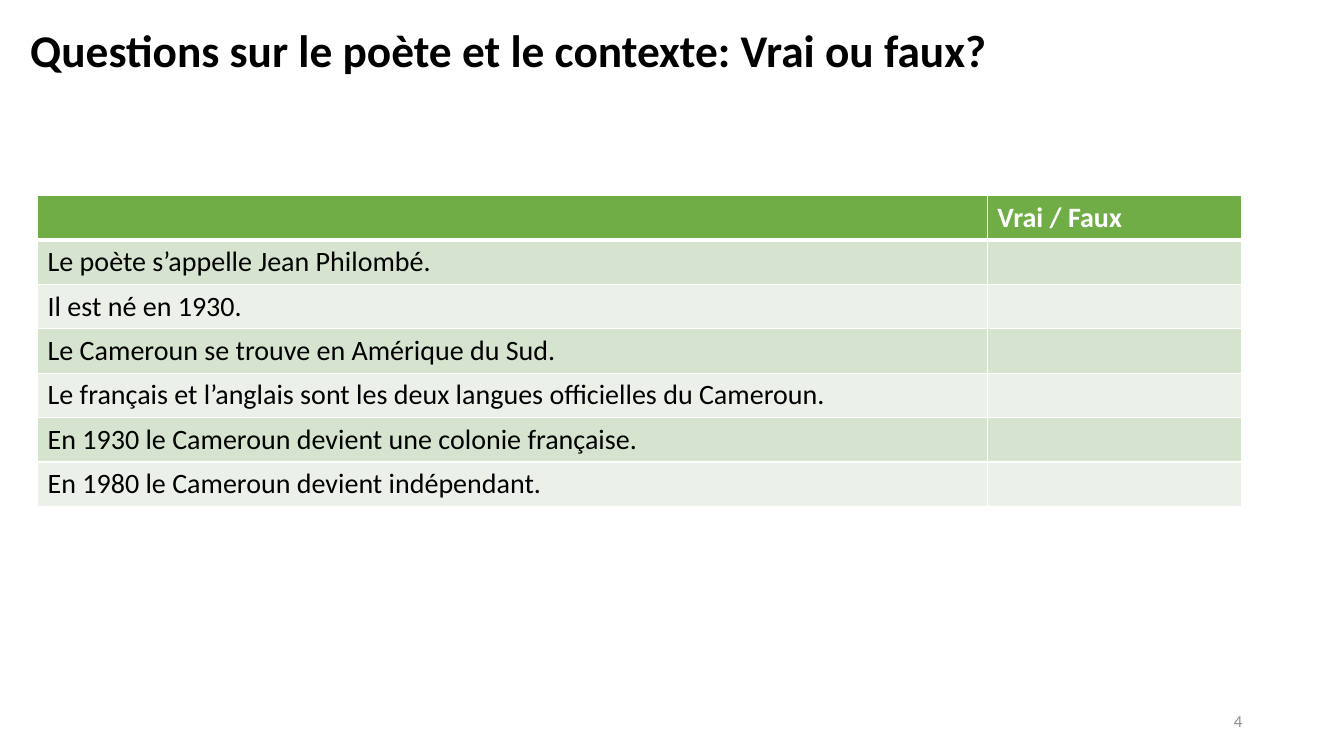
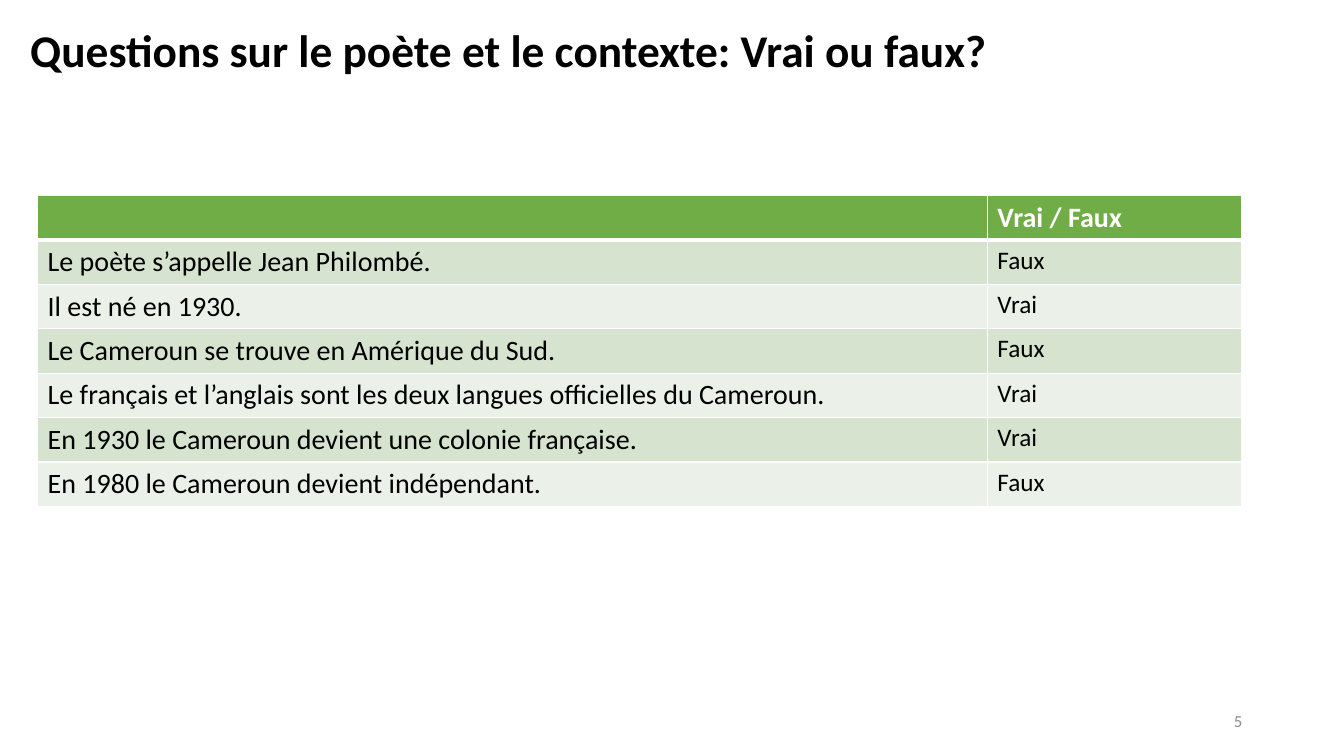
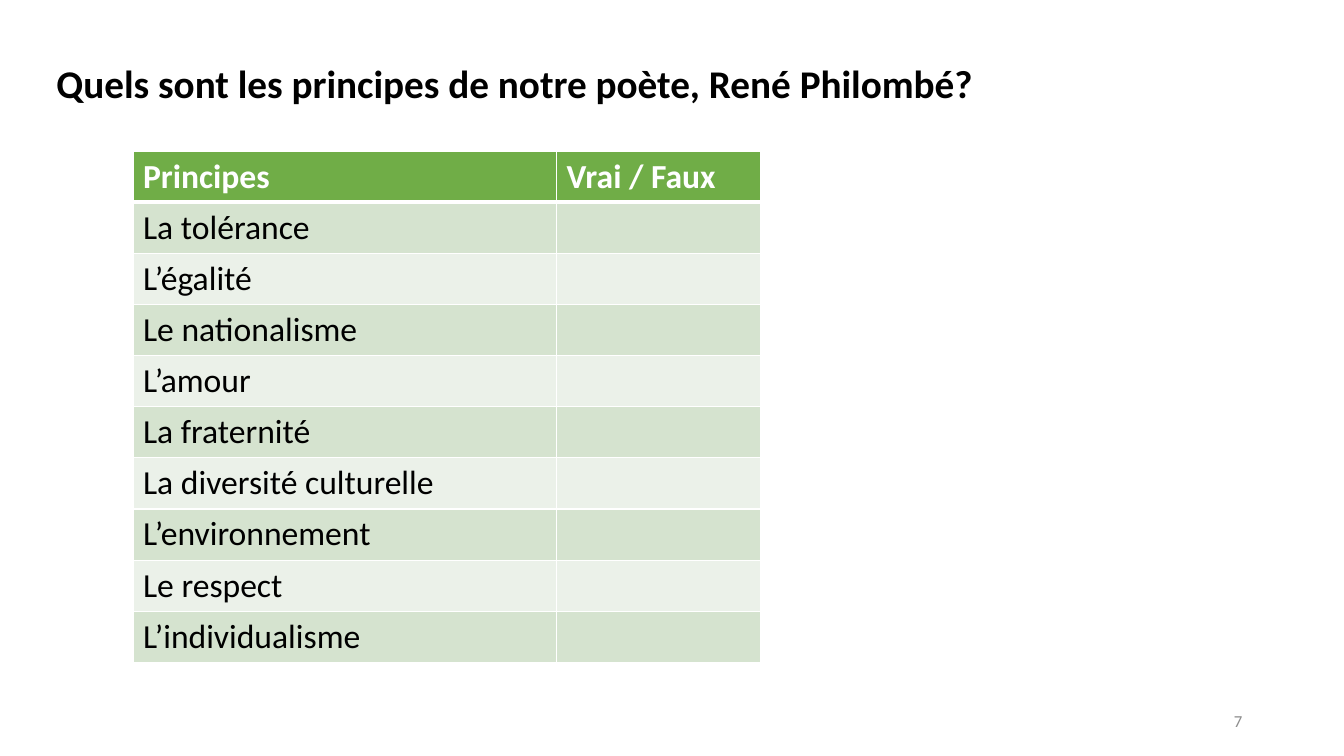
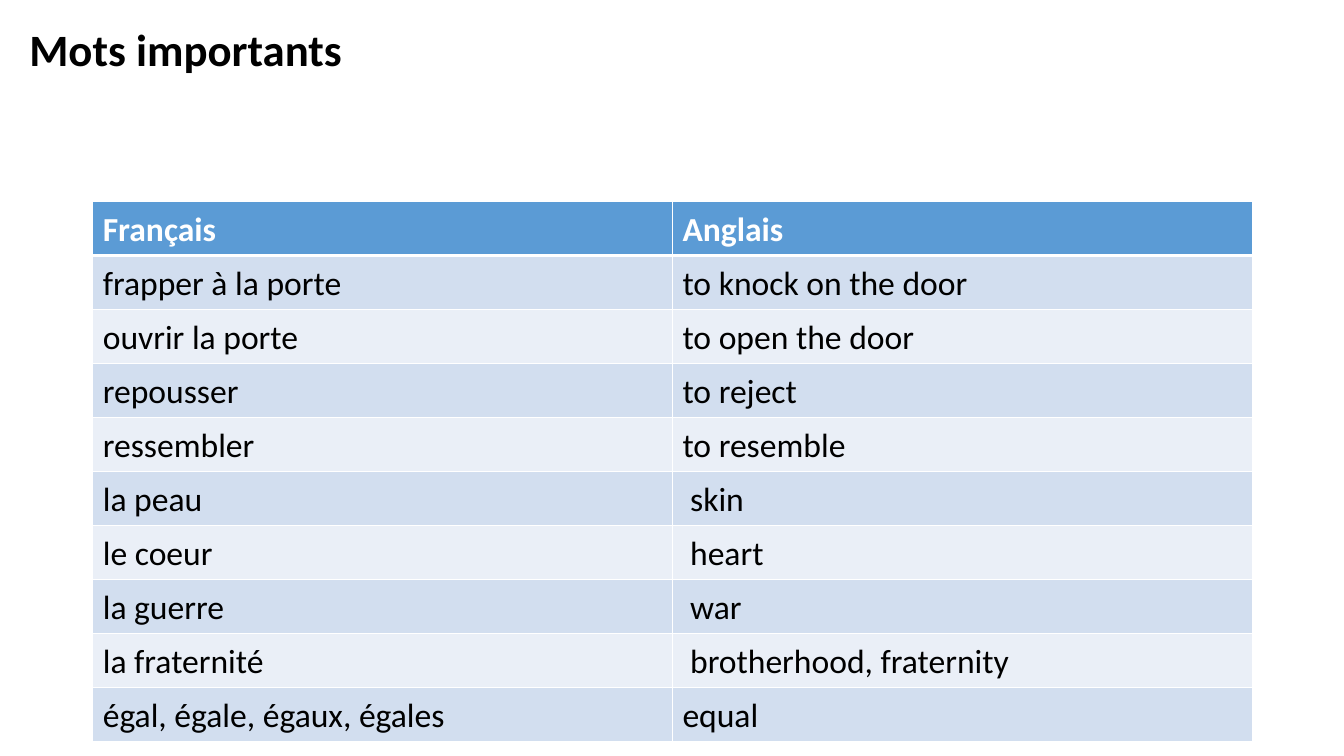
from pptx import Presentation
from pptx.dml.color import RGBColor
from pptx.enum.text import MSO_ANCHOR, MSO_AUTO_SIZE, PP_ALIGN
from pptx.oxml import parse_xml
from pptx.oxml.ns import nsdecls
from pptx.util import Inches, Pt

WIDTH, HEIGHT = Inches(13.33), Inches(7.5)
FONT = "Calibri"
BLACK, WHITE, GREY = "000000", "FFFFFF", "8C8C8C"
GREEN = ("70AD47", "D5E3CF", "EBF1E9")
BLUE = ("5B9BD5", "D2DEEF", "EAEFF7")
TITLE_ONLY = 5

QUIZ_TITLE = "Questions sur le poète et le contexte: Vrai ou faux?"
STATEMENTS = [
    "Le poète s’appelle Jean Philombé.",
    "Il est né en 1930.",
    "Le Cameroun se trouve en Amérique du Sud.",
    "Le français et l’anglais sont les deux langues officielles du Cameroun.",
    "En 1930 le Cameroun devient une colonie française.",
    "En 1980 le Cameroun devient indépendant.",
]
ANSWERS = ["Faux", "Vrai", "Faux", "Vrai", "Vrai", "Faux"]
PRINCIPLES = [
    "La tolérance", "L’égalité", "Le nationalisme", "L’amour", "La fraternité",
    "La diversité culturelle", "L’environnement", "Le respect", "L’individualisme",
]
VOCABULARY = [
    ("Français", "Anglais"),
    ("frapper à la porte", "to knock on the door"),
    ("ouvrir la porte", "to open the door"),
    ("repousser", "to reject"),
    ("ressembler", "to resemble"),
    ("la peau", " skin"),
    ("le coeur", " heart"),
    ("la guerre", " war"),
    ("la fraternité", " brotherhood, fraternity"),
    ("égal, égale, égaux, égales", "equal"),
]


def color(value):
    return RGBColor.from_string(value)


def area(left, top, width, height):
    """Turn percentages of the slide into lengths."""
    return (int(WIDTH * left / 100), int(HEIGHT * top / 100),
            int(WIDTH * width / 100), int(HEIGHT * height / 100))


def add_span(para, text, size, ink=BLACK, bold=False):
    span = para.add_run()
    span.text = text
    span.font.name = FONT
    span.font.size = Pt(size)
    span.font.bold = bold
    span.font.color.rgb = color(ink)


def add_page(deck, title, place, size, anchor=MSO_ANCHOR.TOP, spacing=1.0):
    page = deck.slides.add_slide(deck.slide_layouts[TITLE_ONLY])
    box = page.shapes.title
    box.left, box.top, box.width, box.height = area(*place)
    frame = box.text_frame
    frame.word_wrap = True
    frame.auto_size = MSO_AUTO_SIZE.NONE
    frame.vertical_anchor = anchor
    para = frame.paragraphs[0]
    para.alignment = PP_ALIGN.LEFT
    para.line_spacing = spacing
    add_span(para, title, size, bold=True)
    return page


def add_page_number(page, number):
    box = page.shapes.add_textbox(*area(70.67, 92.67, 22.5, 5.33))
    frame = box.text_frame
    frame.word_wrap = True
    frame.vertical_anchor = MSO_ANCHOR.MIDDLE
    para = frame.paragraphs[0]
    para.alignment = PP_ALIGN.RIGHT
    add_span(para, str(number), 12, GREY)


def add_borders(cell, row):
    properties = cell._tc.get_or_add_tcPr()
    points = {"L": 1, "R": 1, "T": 3 if row == 1 else 1, "B": 3 if row == 0 else 1}
    for side, width in points.items():
        properties.append(parse_xml(
            f'<a:ln{side} {nsdecls("a")} w="{Pt(width)}"><a:solidFill>'
            f'<a:srgbClr val="{WHITE}"/></a:solidFill></a:ln{side}>'))


def add_grid(page, rows, place, weights, sizes, palette, spacing=None, after=None):
    left, top, width, height = area(*place)
    table = page.shapes.add_table(
        len(rows), len(weights), left, top, width, height).table
    for column, weight in zip(table.columns, weights):
        column.width = int(width * weight / sum(weights))
    head, odd, even = palette
    for r, texts in enumerate(rows):
        table.rows[r].height = height // len(rows)
        fill = head if r == 0 else (odd if r % 2 else even)
        for c, text in enumerate(texts):
            cell = table.cell(r, c)
            add_borders(cell, r)
            cell.fill.solid()
            cell.fill.fore_color.rgb = color(fill)
            if text:
                para = cell.text_frame.paragraphs[0]
                if spacing:
                    para.line_spacing = spacing
                    para.space_after = Pt(after)
                add_span(para, text, sizes[0] if r == 0 else sizes[c],
                         WHITE if r == 0 else BLACK, r == 0)


def add_quiz(deck, number, answers):
    page = add_page(deck, QUIZ_TITLE, (1.5, 3.2, 90.85, 7.6), 32.4,
                    MSO_ANCHOR.MIDDLE, 0.9)
    rows = [("", "Vrai / Faux"), *zip(STATEMENTS, answers)]
    add_grid(page, rows, (2.8, 25.87, 89.57, 41), (9.42, 2.52), (20, 18), GREEN)
    add_page_number(page, number)


def add_principles(deck):
    page = add_page(deck, "Quels sont les principes de notre poète, René Philombé?",
                    (3.45, 7.87, 94.15, 8), 28, spacing=0.9)
    rows = [("Principes", "Vrai / Faux"), *((name, "") for name in PRINCIPLES)]
    add_grid(page, rows, (9.9, 20, 46.66, 67.33), (4.2, 2.02), (24, 24), GREEN)
    add_page_number(page, 7)


def add_vocabulary(deck):
    page = add_page(deck, "Mots importants", (1.43, 2.27, 95.4, 8.53), 32)
    add_grid(page, VOCABULARY, (6.9, 26.67, 86.27, 70.3), (1, 1), (24, 24), BLUE,
             spacing=1.07, after=8)


def main():
    deck = Presentation()
    deck.slide_width, deck.slide_height = WIDTH, HEIGHT
    add_quiz(deck, 4, [""] * len(STATEMENTS))
    add_quiz(deck, 5, ANSWERS)
    add_principles(deck)
    add_vocabulary(deck)
    deck.save("out.pptx")


if __name__ == "__main__":
    main()
